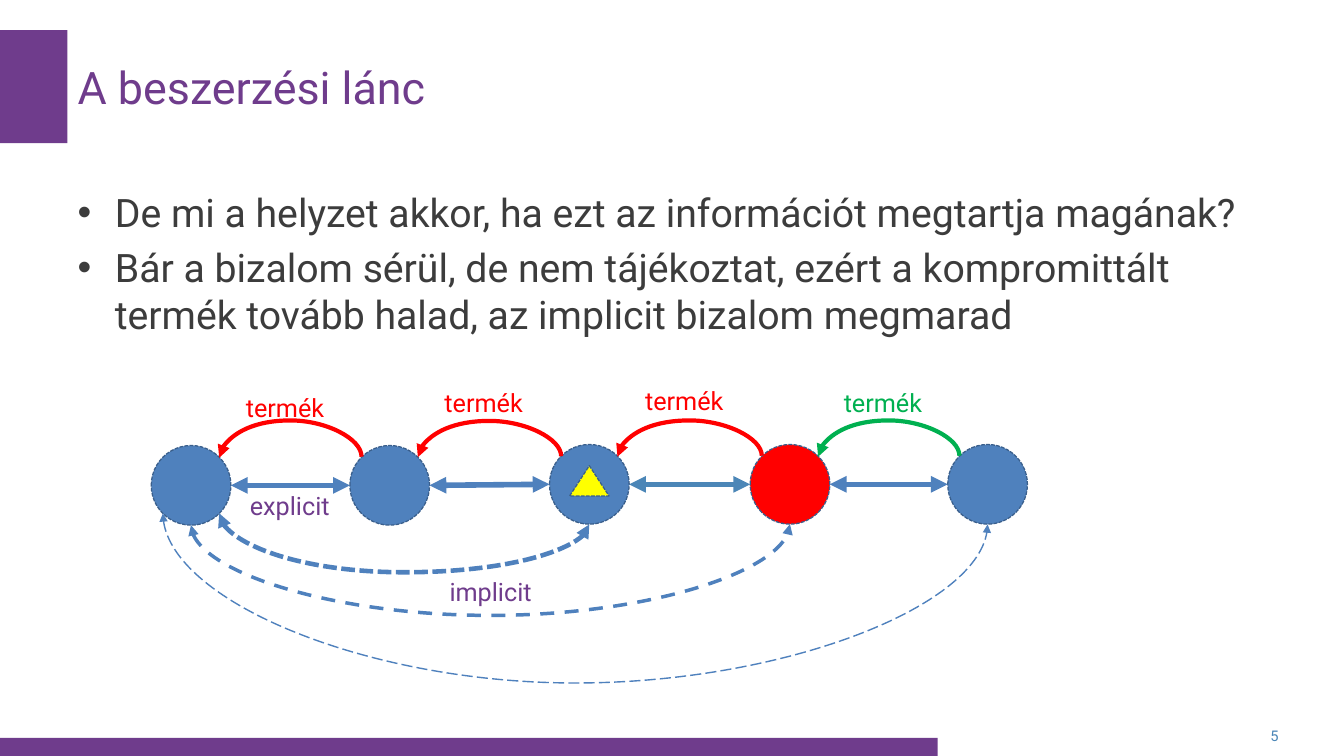
"""Build the supply chain slide with its trust and product arrows."""
from dataclasses import dataclass
from math import cos, radians, sin
from typing import Optional

from lxml import etree
from pptx import Presentation
from pptx import util as u
from pptx.dml.color import RGBColor
from pptx.enum import dml, shapes, text
from pptx.oxml import ns

PURPLE = RGBColor(0x6F, 0x3C, 0x8C)
BLUE = RGBColor(0x4F, 0x81, 0xBD)
TEAL = RGBColor(0x4B, 0x86, 0xB7)
OUTLINE = RGBColor(0x3A, 0x5F, 0x8C)
RED = RGBColor(0xFF, 0x00, 0x00)
GREEN = RGBColor(0x00, 0xB0, 0x50)
YELLOW = RGBColor(0xFF, 0xFF, 0x00)
DARK = RGBColor(0x3C, 0x3C, 0x3C)
FONT = "Roboto"
DIAMETER = 0.79
RIGHT, BOTTOM_RIGHT, BOTTOM, BOTTOM_LEFT, LEFT, TOP_LEFT, TOP_RIGHT = 0, 45, 90, 135, 180, 225, 315


@dataclass
class Partner:
    left: float
    top: float
    color: RGBColor = BLUE

    def point(self, angle: float) -> tuple[float, float]:
        radius = DIAMETER / 2
        return (self.left + radius * (1 + cos(radians(angle))),
                self.top + radius * (1 + sin(radians(angle))))


@dataclass
class Arc:
    source: int
    source_angle: int
    target: int
    target_angle: int
    apex: float
    color: RGBColor
    weight: float
    dash: Optional[dml.MSO_LINE] = None


@dataclass
class Label:
    wording: str
    left: float
    top: float
    width: float
    color: RGBColor


PARTNERS = [Partner(1.5, 4.42), Partner(3.47, 4.42), Partner(5.45, 4.41),
            Partner(7.44, 4.41, RED), Partner(9.4, 4.41)]
EXPLICIT_COLORS = [BLUE, BLUE, TEAL, BLUE]
IMPLICIT_ARCS = [
    Arc(0, BOTTOM_RIGHT, 2, BOTTOM, 5.68, BLUE, 3.25, dml.MSO_LINE.SQUARE_DOT),
    Arc(0, BOTTOM, 3, BOTTOM, 6.12, BLUE, 2.5, dml.MSO_LINE.DASH),
    Arc(0, BOTTOM_LEFT, 4, BOTTOM, 6.78, BLUE, 1, dml.MSO_LINE.LONG_DASH),
]
PRODUCT_ARCS = [Arc(i + 1, TOP_LEFT, i, TOP_RIGHT, 4.17, color, 3)
                for i, color in enumerate([RED, RED, RED, GREEN])]
LABELS = [
    Label("explicit", 2.38, 4.82, 1, PURPLE),
    Label("implicit", 4.36, 5.67, 1.09, PURPLE),
    Label("termék", 2.34, 3.84, 1.09, RED),
    Label("termék", 4.31, 3.79, 1.09, RED),
    Label("termék", 6.3, 3.77, 1.09, RED),
    Label("termék", 8.27, 3.79, 1.09, GREEN),
]
QUESTIONS = [
    "De mi a helyzet akkor, ha ezt az információt megtartja magának?",
    "Bár a bizalom sérül, de nem tájékoztat, ezért a kompromittált termék "
    "tovább halad, az implicit bizalom megmarad",
]


def style(paragraph, size: float, color: RGBColor) -> None:
    paragraph.font.name = FONT
    paragraph.font.size = u.Pt(size)
    paragraph.font.color.rgb = color


def place(item, left: float, top: float, width: float, height: float) -> None:
    item.left, item.top = u.Inches(left), u.Inches(top)
    item.width, item.height = u.Inches(width), u.Inches(height)


def add_solid(slide, kind, left: float, top: float, width: float, height: float,
              fill: RGBColor, outlined: bool = False) -> None:
    solid = slide.shapes.add_shape(kind, *map(u.Inches, (left, top, width, height)))
    solid.shadow.inherit = False
    solid.fill.solid()
    solid.fill.fore_color.rgb = fill
    if outlined:
        solid.line.color.rgb = OUTLINE
        solid.line.width = u.Pt(0.9)
        solid.line.dash_style = dml.MSO_LINE.SQUARE_DOT
    else:
        solid.line.fill.background()


def add_arrow(slide, kind, begin: tuple[float, float], end: tuple[float, float],
              color: RGBColor, weight: float, dash, both_ends: bool):
    arrow = slide.shapes.add_connector(kind, *map(u.Inches, (*begin, *end)))
    arrow.line.color.rgb = color
    arrow.line.width = u.Pt(weight)
    if dash is not None:
        arrow.line.dash_style = dash
    outline = arrow.line._get_or_add_ln()
    for tag in ("a:headEnd", "a:tailEnd") if both_ends else ("a:tailEnd",):
        etree.SubElement(outline, ns.qn(tag), type="triangle")
    etree.SubElement(arrow._element.spPr, ns.qn("a:effectLst"))
    return arrow


def add_arc(slide, arc: Arc, both_ends: bool) -> None:
    x1, y1 = PARTNERS[arc.source].point(arc.source_angle)
    x2, y2 = PARTNERS[arc.target].point(arc.target_angle)
    run, drop = x2 - x1, round(y2 - y1, 2) or 0.01
    middle_x, middle_y = (x1 + x2) / 2, (y1 + y2) / 2
    curve = add_arrow(slide, shapes.MSO_CONNECTOR.CURVE,
                      (middle_x - drop / 2, middle_y + run / 2),
                      (middle_x + drop / 2, middle_y - run / 2),
                      arc.color, arc.weight, arc.dash, both_ends)
    properties = curve._element.spPr
    properties.find(ns.qn("a:xfrm")).set("rot", str(90 * 60000))
    adjustments = properties.find(ns.qn("a:prstGeom")).get_or_add_avLst()
    bend = round((arc.apex - y1) / drop * 100000)
    etree.SubElement(adjustments, ns.qn("a:gd"), name="adj1", fmla=f"val {bend}")


def add_label(slide, label: Label) -> None:
    box = slide.shapes.add_textbox(*map(u.Inches, (label.left, label.top, label.width, 0.4)))
    box.text_frame.word_wrap = True
    box.text_frame.text = label.wording
    style(box.text_frame.paragraphs[0], 18, label.color)


def add_texts(slide) -> None:
    title, body = slide.placeholders
    place(title, 0.67, 0.3, 8.67, 1.12)
    title.text_frame.text = "A beszerzési lánc"
    title.text_frame.vertical_anchor = text.MSO_ANCHOR.MIDDLE
    title.text_frame.paragraphs[0].alignment = text.PP_ALIGN.LEFT
    style(title.text_frame.paragraphs[0], 32, PURPLE)

    place(body, 0.67, 1.82, 12.11, 4.96)
    body.text_frame.text = "\n".join(QUESTIONS)
    for i, question in enumerate(body.text_frame.paragraphs):
        question.space_before = u.Pt(5.6 if i else 0)
        indents = question._p.get_or_add_pPr()
        indents.set("marL", str(u.Inches(0.37)))
        indents.set("indent", str(u.Inches(-0.37)))
        style(question, 28, DARK)

    number = slide.shapes.add_textbox(*map(u.Inches, (11.11, 7.1, 1.67, 0.4)))
    number.text_frame.text = "5"
    number.text_frame.word_wrap = True
    number.text_frame.vertical_anchor = text.MSO_ANCHOR.MIDDLE
    number.text_frame.paragraphs[0].alignment = text.PP_ALIGN.RIGHT
    style(number.text_frame.paragraphs[0], 10.5, TEAL)


def main() -> None:
    deck = Presentation()
    deck.slide_width, deck.slide_height = u.Inches(13.33), u.Inches(7.5)
    slide = deck.slides.add_slide(deck.slide_layouts[1])
    add_solid(slide, shapes.MSO_SHAPE.RECTANGLE, 0, 7.32, 9.3, 0.18, PURPLE)
    add_solid(slide, shapes.MSO_SHAPE.RECTANGLE, 0, 0.3, 0.67, 1.12, PURPLE)
    add_texts(slide)
    for partner in PARTNERS:
        add_solid(slide, shapes.MSO_SHAPE.OVAL, partner.left, partner.top,
                  DIAMETER, DIAMETER, partner.color, outlined=True)
    for buyer, seller, color in zip(PARTNERS, PARTNERS[1:], EXPLICIT_COLORS):
        add_arrow(slide, shapes.MSO_CONNECTOR.STRAIGHT, buyer.point(RIGHT),
                  seller.point(LEFT), color, 4, None, both_ends=True)
    for arc in IMPLICIT_ARCS:
        add_arc(slide, arc, both_ends=True)
    for arc in PRODUCT_ARCS:
        add_arc(slide, arc, both_ends=False)
    for label in LABELS:
        add_label(slide, label)
    add_solid(slide, shapes.MSO_SHAPE.ISOSCELES_TRIANGLE, 5.65, 4.62, 0.39, 0.3,
              YELLOW, outlined=True)
    deck.save("out.pptx")


if __name__ == "__main__":
    main()
